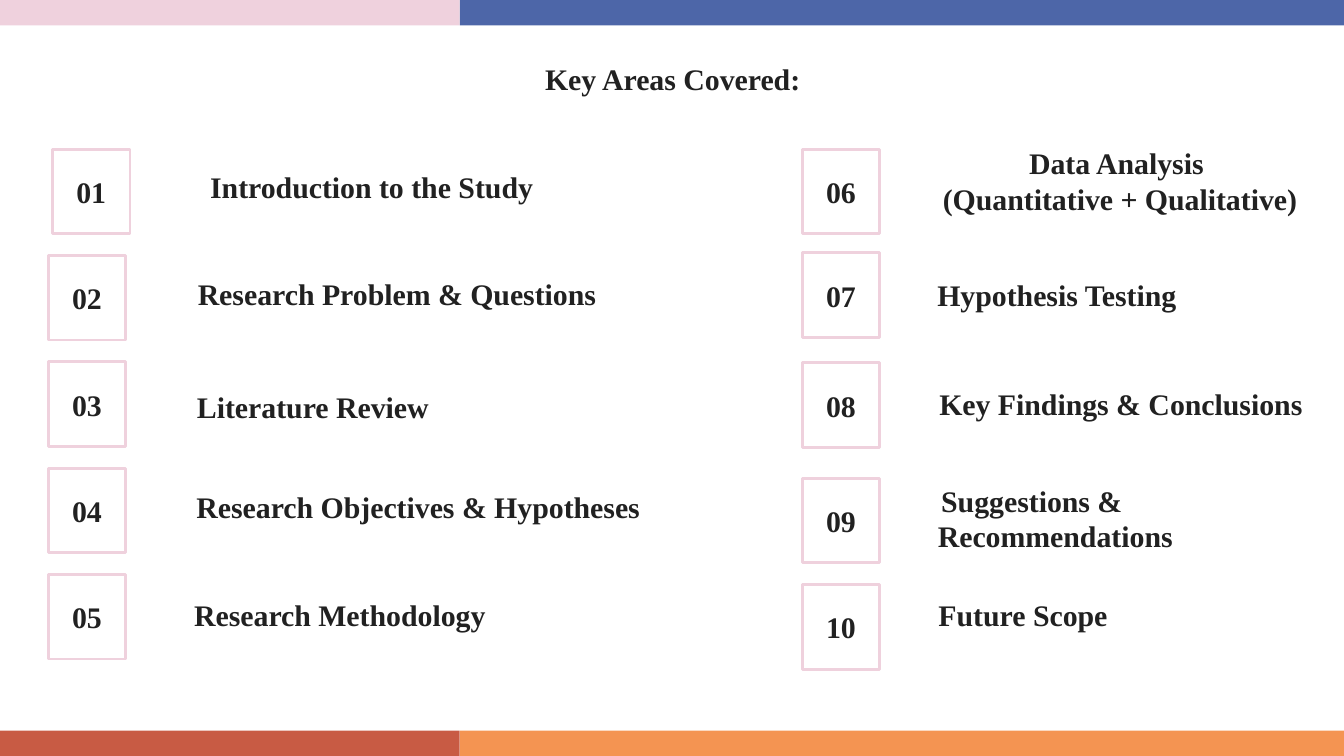
"""Build the agenda slide: ten numbered key areas in two columns."""
from dataclasses import dataclass

from pptx import Presentation
from pptx.dml.color import RGBColor
from pptx.enum.shapes import MSO_SHAPE
from pptx.enum.text import MSO_ANCHOR, PP_ALIGN
from pptx.util import Cm, Pt


@dataclass(frozen=True)
class Theme:
    font: str = "Times New Roman"
    size: Pt = Pt(16)
    ink: RGBColor = RGBColor.from_string("212121")
    pink: RGBColor = RGBColor.from_string("EFD1DD")
    blue: RGBColor = RGBColor.from_string("4D66A8")
    red: RGBColor = RGBColor.from_string("C85B44")
    orange: RGBColor = RGBColor.from_string("F49452")


theme = Theme()


def add_rectangle(left, top, width, height):
    shape = slide.shapes.add_shape(
        MSO_SHAPE.RECTANGLE, Cm(left), Cm(top), Cm(width), Cm(height))
    shape.shadow.inherit = False
    return shape


def write_text(shape, text, anchor, hanging=False):
    frame = shape.text_frame
    frame.word_wrap = True
    frame.vertical_anchor = anchor
    frame.margin_left = frame.margin_right = Cm(0.25)
    frame.margin_top = frame.margin_bottom = Cm(0.25)
    frame.text = text
    for paragraph in frame.paragraphs:
        paragraph.alignment = PP_ALIGN.CENTER
        if hanging:
            properties = paragraph._p.get_or_add_pPr()
            properties.set("marL", str(Cm(1.27)))
            properties.set("indent", str(Cm(-0.89)))
        paragraph.font.name = theme.font
        paragraph.font.size = theme.size
        paragraph.font.bold = True
        paragraph.font.color.rgb = theme.ink


presentation = Presentation()
presentation.slide_width = Cm(25.4)
presentation.slide_height = Cm(14.29)
slide = presentation.slides.add_slide(presentation.slide_layouts[6])

bar_height, bar_split = 0.48, 8.69
for top, left_color, right_color in (
    (0, theme.pink, theme.blue),
    (14.29 - bar_height, theme.red, theme.orange),
):
    for left, width, color in (
        (0, bar_split, left_color),
        (bar_split, 25.4 - bar_split, right_color),
    ):
        bar = add_rectangle(left, top, width, bar_height)
        bar.fill.solid()
        bar.fill.fore_color.rgb = color
        bar.line.fill.background()

title = slide.shapes.add_textbox(Cm(2.01), Cm(0.89), Cm(21.41), Cm(1.6))
write_text(title, "Key Areas Covered:", MSO_ANCHOR.TOP)

number_places = [(0.99 if row == 0 else 0.91, 2.82 + 2.01 * row) for row in range(5)]
number_places += [(15.16, top) for top in (2.82, 4.78, 6.86, 9.04, 11.05)]
for number, (left, top) in enumerate(number_places, start=1):
    number_box = add_rectangle(left, top, 1.47, 1.6)
    number_box.fill.background()
    number_box.line.color.rgb = theme.pink
    number_box.line.width = Pt(1.5)
    write_text(number_box, f"{number:02d}", MSO_ANCHOR.MIDDLE)

topics = (
    ("Introduction to the Study", 2.24, 3.1, 9.19, 1.02),
    ("Research Problem & Questions", 3.05, 5.11, 8.53, 1.02),
    ("Literature Review", 2.64, 7.26, 6.17, 1.02),
    ("Research Objectives & Hypotheses", 2.24, 9.14, 10.95, 1.02),
    ("Research Methodology", 2.41, 11.18, 7.65, 1.02),
    ("Data Analysis \n(Quantitative + Qualitative)", 16.23, 2.82, 9.5, 1.52),
    ("Hypothesis Testing", 16.46, 5.13, 6.65, 1.02),
    ("Key Findings & Conclusions", 16.59, 7.19, 8.81, 1.02),
    ("Suggestions & Recommendations", 15.93, 9.09, 6.76, 1.63),
    ("Future Scope", 16.81, 11.18, 4.67, 1.02),
)
for text, left, top, width, height in topics:
    topic_box = slide.shapes.add_textbox(Cm(left), Cm(top), Cm(width), Cm(height))
    write_text(topic_box, text, MSO_ANCHOR.BOTTOM, hanging=True)

presentation.save("out.pptx")
